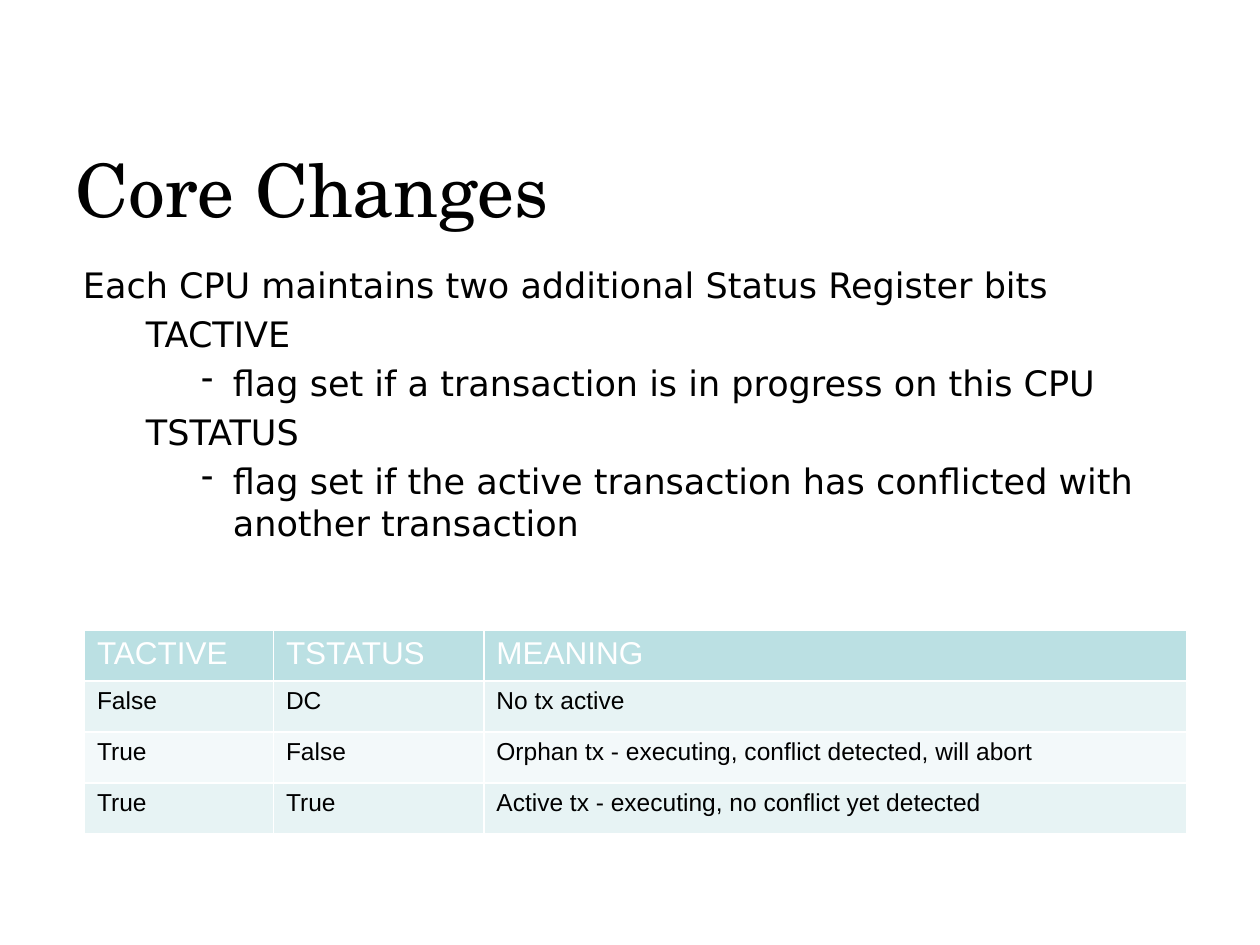
"""Build the Core Changes slide: title, outline and status table."""
from dataclasses import dataclass

from lxml import etree
from pptx import Presentation
from pptx.dml.color import RGBColor
from pptx.enum.text import MSO_ANCHOR
from pptx.oxml.ns import qn
from pptx.util import Inches, Pt

TOP, MIDDLE = MSO_ANCHOR.TOP, MSO_ANCHOR.MIDDLE


@dataclass(frozen=True)
class Theme:
    black: str = "000000"
    white: str = "FFFFFF"
    header: str = "BBE0E3"
    bands: tuple = ("E7F3F4", "F3F9FA")
    title_font: str = "TeX Gyre Schola"
    body_font: str = "DejaVu Sans"
    table_font: str = "Arial"
    title_size: int = 42
    body_size: int = 20
    header_size: int = 18
    cell_size: int = 14
    border: int = 1


THEME = Theme()
TITLE_FORMAT = {"name": THEME.title_font, "size": Pt(THEME.title_size)}
BODY_FORMAT = {"name": THEME.body_font, "size": Pt(THEME.body_size)}
HEADER_FORMAT = {"name": THEME.table_font, "size": Pt(THEME.header_size), "bold": False}
CELL_FORMAT = {"name": THEME.table_font, "size": Pt(THEME.cell_size), "bold": False}

INDENTS = ((0.38, -0.38), (0.81, -0.31), (1.19, -0.25))
OUTLINE = (
    (0, "Each CPU maintains two additional Status Register bits"),
    (1, "TACTIVE"),
    (2, "flag set if a transaction is in progress on this CPU"),
    (1, "TSTATUS"),
    (2, "flag set if the active transaction has conflicted with another transaction"),
)
COLUMNS = (1.5, 1.67, 5.58)
ROWS = (
    ("TACTIVE", "TSTATUS", "MEANING"),
    ("False", "DC", "No tx active"),
    ("True", "False", "Orphan tx - executing, conflict detected, will abort"),
    ("True", "True", "Active tx - executing, no conflict yet detected"),
)


def add_run(p, text, fmt, color):
    r = p.add_run()
    r.text = text
    for name, value in fmt.items():
        setattr(r.font, name, value)
    r.font.color.rgb = RGBColor.from_string(color)


def add_text_frame(s, left, top, width, height, anchor):
    sp = s.shapes.add_textbox(Inches(left), Inches(top), Inches(width), Inches(height))
    tf = sp.text_frame
    tf.word_wrap = True
    tf.vertical_anchor = anchor
    return tf


def add_title(s, text):
    p = add_text_frame(s, 0.5, 1.17, 7.92, 0.73, MIDDLE).paragraphs[0]
    p.line_spacing = 0.9
    add_run(p, text, TITLE_FORMAT, THEME.black)


def set_indent(p, level):
    margin, indent = INDENTS[level]
    pPr = p._p.get_or_add_pPr()
    pPr.set("marL", str(Inches(margin)))
    pPr.set("indent", str(Inches(indent)))
    if level == 2:
        etree.SubElement(pPr, qn("a:buChar"), char="-")
    else:
        etree.SubElement(pPr, qn("a:buNone"))
    p.level = level


def add_outline(s, items):
    tf = add_text_frame(s, 0.56, 2.04, 9.19, 2.39, TOP)
    for i, (level, text) in enumerate(items):
        p = tf.add_paragraph() if i else tf.paragraphs[0]
        set_indent(p, level)
        p.space_before = Pt(0.2 * THEME.body_size if i else 0)
        add_run(p, text, BODY_FORMAT, THEME.black)


def set_borders(cell):
    tcPr = cell._tc.get_or_add_tcPr()
    for i, side in enumerate(("a:lnL", "a:lnR", "a:lnT", "a:lnB")):
        ln = etree.Element(qn(side), w=str(Pt(THEME.border)))
        fill = etree.SubElement(ln, qn("a:solidFill"))
        etree.SubElement(fill, qn("a:srgbClr"), val=THEME.white)
        tcPr.insert(i, ln)


def fill_cell(cell, text, fill, fmt, color):
    cell.fill.solid()
    cell.fill.fore_color.rgb = RGBColor.from_string(fill)
    set_borders(cell)
    add_run(cell.text_frame.paragraphs[0], text, fmt, color)


def add_status_table(s, rows):
    table = s.shapes.add_table(
        len(rows), len(COLUMNS), Inches(0.67), Inches(5), Inches(sum(COLUMNS)), Inches(1.62)
    ).table
    for column, width in zip(table.columns, COLUMNS):
        column.width = Inches(width)
    for i, row in enumerate(rows):
        if i == 0:
            style = (THEME.header, HEADER_FORMAT, THEME.white)
        else:
            style = (THEME.bands[(i - 1) % 2], CELL_FORMAT, THEME.black)
        for j, text in enumerate(row):
            fill_cell(table.cell(i, j), text, *style)


def main():
    prs = Presentation()
    prs.slide_width, prs.slide_height = Inches(10), Inches(7.5)
    s = prs.slides.add_slide(prs.slide_layouts[6])
    add_title(s, "Core Changes")
    add_outline(s, OUTLINE)
    add_status_table(s, ROWS)
    prs.save("out.pptx")


if __name__ == "__main__":
    main()
